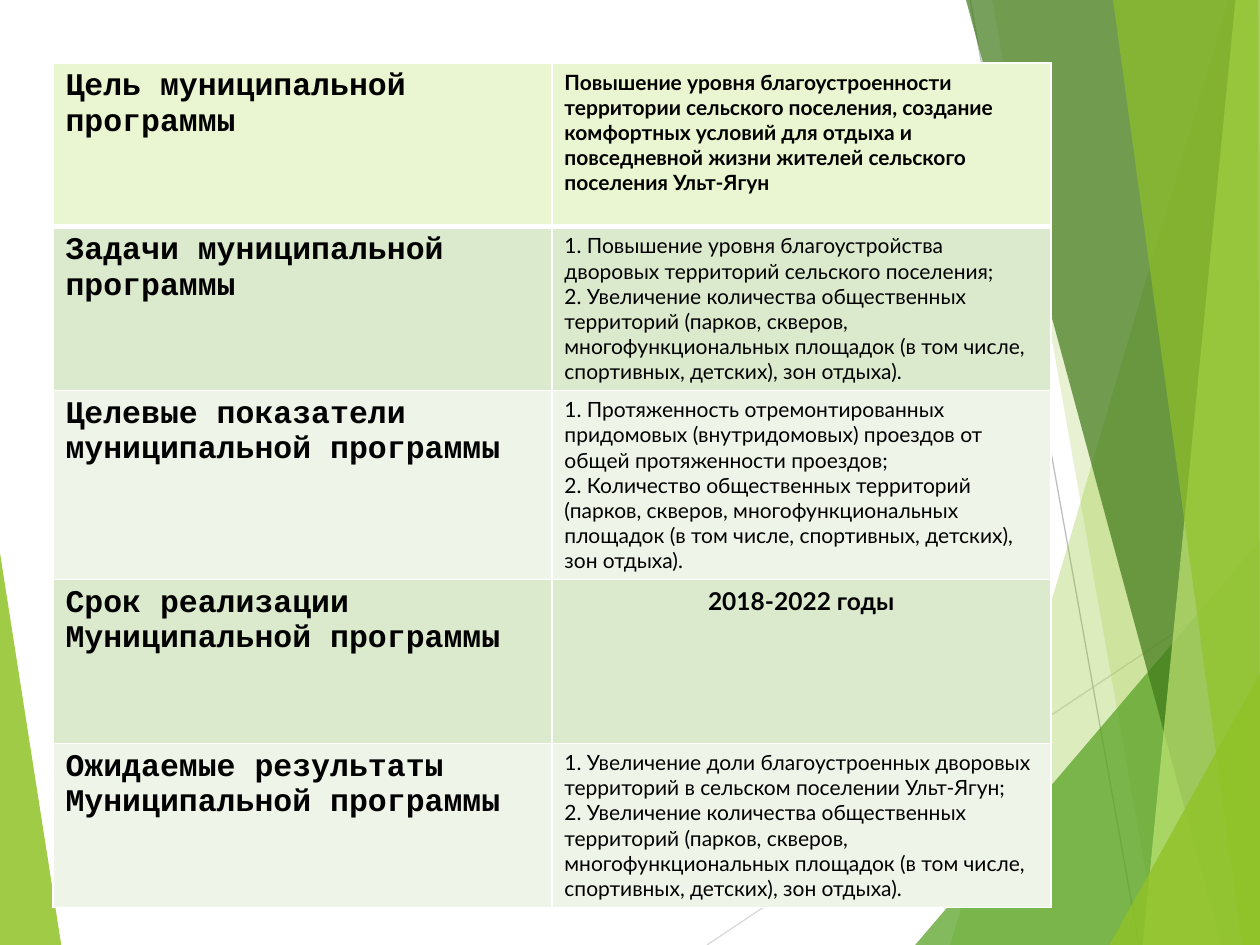
from lxml import etree
from pptx import Presentation
from pptx.dml.color import RGBColor
from pptx.enum import shapes, text
from pptx.oxml.ns import qn
from pptx.util import Pt

WHITE = RGBColor(0xFF, 0xFF, 0xFF)
BLACK = RGBColor(0, 0, 0)
LIME = RGBColor(0x90, 0xC2, 0x26)
GREEN = RGBColor(0x54, 0xA0, 0x21)
FOREST = RGBColor(0x3F, 0x78, 0x19)
PALE_LIME = RGBColor(0xC0, 0xE4, 0x74)
GRAY = RGBColor(0xBF, 0xBF, 0xBF)
LIGHT_GRAY = RGBColor(0xD9, 0xD9, 0xD9)
GOAL_FILL = RGBColor(0xEA, 0xF6, 0xD1)
DARK_BAND = RGBColor(0xDB, 0xE9, 0xCD)
LIGHT_BAND = RGBColor(0xEE, 0xF4, 0xE8)

W, H = 720, 540
LEFT, TOP, COLUMN, ROW = 30.24, 36, 285.12, 93.6

# Heading paragraphs, body paragraphs, body size, body bold, body centred, fill
PROGRAM = [
    (["Цель муниципальной программы"],
     ["Повышение уровня благоустроенности территории сельского поселения, создание "
      "комфортных условий для отдыха и повседневной жизни жителей сельского "
      "поселения Ульт-Ягун"], 12, True, False, GOAL_FILL),
    (["Задачи муниципальной программы"],
     ["1. Повышение уровня благоустройства дворовых территорий сельского поселения;",
      "2. Увеличение количества общественных территорий (парков, скверов, "
      "многофункциональных площадок (в том числе, спортивных, детских), зон отдыха)."],
     12, False, False, DARK_BAND),
    (["Целевые показатели", "муниципальной программы"],
     ["1. Протяженность отремонтированных придомовых (внутридомовых) проездов от "
      "общей протяженности проездов;",
      "2. Количество общественных территорий (парков, скверов, "
      "многофункциональных площадок (в том числе, спортивных, детских), зон отдыха)."],
     12, False, False, LIGHT_BAND),
    (["Срок реализации", "Муниципальной программы"],
     ["2018-2022 годы"], 14, True, True, DARK_BAND),
    (["Ожидаемые результаты", "Муниципальной программы"],
     ["1. Увеличение доли благоустроенных дворовых территорий в сельском поселении "
      "Ульт-Ягун;",
      "2. Увеличение количества общественных территорий (парков, скверов, "
      "многофункциональных площадок (в том числе, спортивных, детских), зон отдыха)."],
     12, False, False, LIGHT_BAND),
]

# Background: corners, colour, opacity in percent
LEFT_FACET = ([(0, 316), (35.3, H), (0, H)], LIME, 85)
RAYS = [((404, H), (W, 329), LIGHT_GRAY), ((554.4, 0), (651, H), GRAY)]
RIGHT_FACETS = [
    ([(702, 0), (543, H), (W, H), (W, 0)], LIME, 30),
    ([(567.4, 0), (661.7, H), (W, H), (W, 0)], LIME, 20),
    ([(522.7, H), (W, 309), (W, H)], GREEN, 72),
    ([(552.2, 0), (698.4, H), (W, H), (W, 0)], FOREST, 70),
    ([(706.3, 0), (653, H), (W, H), (W, 0)], PALE_LIME, 70),
    ([(635.8, 0), (710, H), (W, H), (718.6, 0)], LIME, 65),
    ([(634.3, H), (W, 385.2), (W, H)], LIME, 80),
]


def add_facet(slide, corners, color, opacity):
    builder = slide.shapes.build_freeform(*corners[0], scale=Pt(1))
    builder.add_line_segments(corners[1:], close=True)
    facet = builder.convert_to_shape()
    facet.shadow.inherit = False
    facet.line.fill.background()
    facet.fill.solid()
    facet.fill.fore_color.rgb = color
    srgb = facet.fill._xPr.find(".//" + qn("a:srgbClr"))
    etree.SubElement(srgb, qn("a:alpha"), val=str(opacity * 1000))


def add_ray(slide, start, end, color):
    ray = slide.shapes.add_connector(
        shapes.MSO_CONNECTOR.STRAIGHT, *(Pt(v) for v in start + end))
    ray.line.color.rgb = color
    ray.line.width = Pt(0.75)
    etree.SubElement(ray._element.spPr, qn("a:effectLst"))


def set_borders(cell, top, bottom):
    properties = cell._tc.get_or_add_tcPr()
    sides = [("L", 1), ("R", 1), ("T", top), ("B", bottom)]
    for index, (side, width) in enumerate(sides):
        border = etree.Element(qn("a:ln" + side), w=str(Pt(width)))
        fill = etree.SubElement(border, qn("a:solidFill"))
        etree.SubElement(fill, qn("a:srgbClr"), val=str(WHITE))
        properties.insert(index, border)


def fill_cell(cell, paragraphs, font, size, bold, centred, fill):
    cell.fill.solid()
    cell.fill.fore_color.rgb = fill
    cell.text = "\n".join(paragraphs)
    for paragraph in cell.text_frame.paragraphs:
        paragraph.alignment = text.PP_ALIGN.CENTER if centred else text.PP_ALIGN.LEFT
        paragraph.font.name = font
        paragraph.font.size = Pt(size)
        paragraph.font.bold = bold
        paragraph.font.color.rgb = BLACK


def main():
    deck = Presentation()
    deck.slide_width, deck.slide_height = Pt(W), Pt(H)
    slide = deck.slides.add_slide(deck.slide_layouts[6])

    # Faceted background
    add_facet(slide, *LEFT_FACET)
    for ray in RAYS:
        add_ray(slide, *ray)
    for facet in RIGHT_FACETS:
        add_facet(slide, *facet)

    # Program table
    count = len(PROGRAM)
    table = slide.shapes.add_table(
        count, 2, Pt(LEFT), Pt(TOP), Pt(2 * COLUMN), Pt(count * ROW)).table
    table.first_row = table.horz_banding = False
    for column in table.columns:
        column.width = Pt(COLUMN)
    for i, (heading, body, size, bold, centred, fill) in enumerate(PROGRAM):
        table.rows[i].height = Pt(ROW)
        fill_cell(table.cell(i, 0), heading, "Courier New", 18, True, False, fill)
        fill_cell(table.cell(i, 1), body, "Lato", size, bold, centred, fill)
        for cell in table.rows[i].cells:
            set_borders(cell, top=3 if i == 1 else 1, bottom=3 if i == 0 else 1)

    deck.save("out.pptx")


if __name__ == "__main__":
    main()
